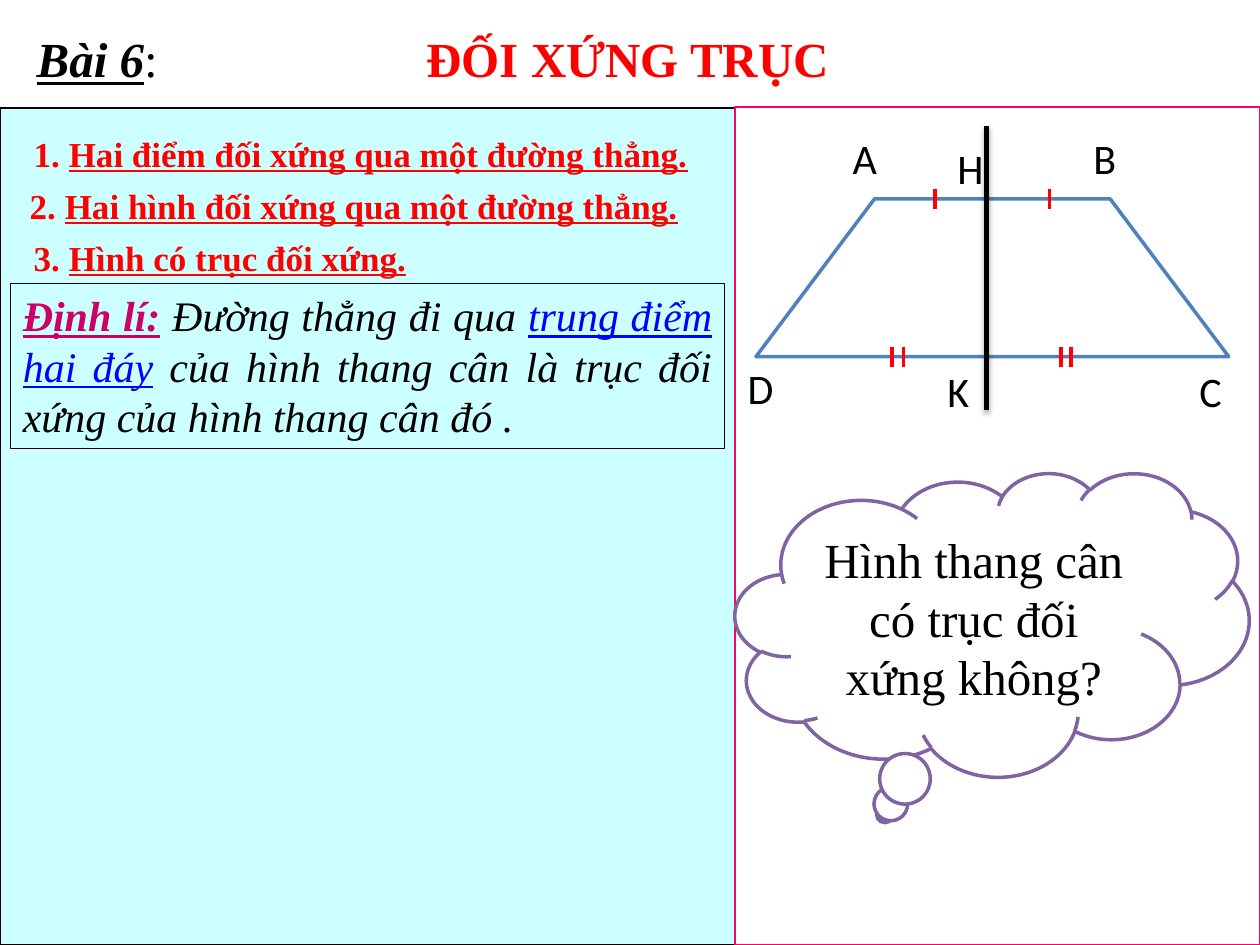
from lxml.etree import SubElement
from pptx import Presentation
from pptx.dml.color import RGBColor
from pptx.enum.shapes import MSO_CONNECTOR, MSO_SHAPE
from pptx.enum.text import MSO_ANCHOR, PP_ALIGN
from pptx.oxml.ns import qn
from pptx.util import Cm, Pt

SERIF, SANS = "Times New Roman", "Calibri"
BLACK, WHITE, RED, BLUE = "000000", "FFFFFF", "FF0000", "0000FF"
PINK, MAGENTA, CYAN = "FF0066", "CC0066", "CCFFFF"
STEEL, PURPLE = "4F81BD", "8064A2"


def rgb(value):
    return RGBColor.from_string(value)


class Lesson:
    def __init__(self, presentation):
        self.slide = presentation.slides.add_slide(presentation.slide_layouts[6])
        self.shapes = self.slide.shapes

    def style(self, shape, fill, line, width):
        shape.shadow.inherit = False
        if fill:
            shape.fill.solid()
            shape.fill.fore_color.rgb = rgb(fill)
        else:
            shape.fill.background()
        shape.line.color.rgb = rgb(line)
        shape.line.width = Pt(width)
        return shape

    def shape(self, box, fill, line, width=0.75, kind=MSO_SHAPE.RECTANGLE):
        shape = self.shapes.add_shape(kind, *map(Cm, box))
        return self.style(shape, fill, line, width)

    def polygon(self, corners, fill, line, width):
        points = [(Cm(x), Cm(y)) for x, y in corners]
        builder = self.shapes.build_freeform(*points[0])
        builder.add_line_segments(points[1:], close=True)
        return self.style(builder.convert_to_shape(), fill, line, width)

    def put_text(self, shape, parts, size, font=SERIF, align=PP_ALIGN.LEFT,
                 anchor=MSO_ANCHOR.TOP):
        """Each part is (text, colour, marks); marks are letters of "biu"."""
        frame = shape.text_frame
        frame.word_wrap = True
        frame.vertical_anchor = anchor
        paragraph = frame.paragraphs[0]
        paragraph.alignment = align
        for text, color, marks in parts:
            run = paragraph.add_run()
            run.text = text
            run.font.name = font
            run.font.size = Pt(size)
            run.font.color.rgb = rgb(color)
            run.font.bold = "b" in marks
            run.font.italic = "i" in marks
            run.font.underline = "u" in marks
        return paragraph

    def text(self, box, parts, size, font=SERIF):
        return self.put_text(self.shapes.add_textbox(*map(Cm, box)), parts, size, font)

    def tab_stop(self, paragraph, position):
        tabs = SubElement(paragraph._p.get_or_add_pPr(), qn("a:tabLst"))
        SubElement(tabs, qn("a:tab"), pos=str(Cm(position)), algn="l")

    def vertical(self, x, top, bottom, color, width, shadow=False):
        line = self.shapes.add_connector(
            MSO_CONNECTOR.STRAIGHT, Cm(x), Cm(top), Cm(x), Cm(bottom))
        line.line.color.rgb = rgb(color)
        line.line.width = Pt(width)
        effects = SubElement(line._element.spPr, qn("a:effectLst"))
        if shadow:
            outer = SubElement(effects, qn("a:outerShdw"), blurRad="40000",
                               dist="23000", dir="5400000", rotWithShape="0")
            black = SubElement(outer, qn("a:srgbClr"), val=BLACK)
            SubElement(black, qn("a:alpha"), val="35000")


def main():
    presentation = Presentation()
    presentation.slide_width, presentation.slide_height = Cm(25.4), Cm(19.05)
    lesson = Lesson(presentation)

    # Panels
    lesson.shape((0, 2.18, 14.82, 16.87), CYAN, BLACK)
    lesson.shape((14.82, 2.16, 10.58, 16.89), WHITE, PINK)

    # Title
    title = lesson.text((0.49, 0.46, 24.9, 1.45), [
        ("Bài 6", BLACK, "biu"), (":\t", BLACK, ""), ("ĐỐI XỨNG TRỤC", RED, "b")], 28)
    lesson.tab_stop(title, 7.86)

    # Section headings
    headings = [(0.43, "Hai điểm đối xứng qua một đường thẳng."),
                (0.35, "Hai hình đối xứng qua một đường thẳng."),
                (0.43, "Hình có trục đối xứng.")]
    for index, (left, heading) in enumerate(headings):
        lesson.text((left, 2.54 + 1.05 * index, 14.2, 1.1), [
            (f"{index + 1}. ", RED, "b"), (heading, RED, "bu")], 20)

    # Isosceles trapezoid ABCD
    top, bottom = 4.01, 7.19
    lesson.polygon([(17.63, top), (22.38, top), (24.77, bottom), (15.24, bottom)],
                   WHITE, STEEL, 2)

    # Axis HK and equal-length marks
    lesson.vertical(19.89, 2.54, 8.26, BLACK, 3, shadow=True)
    for side, marks in [(top, (18.85, 21.16)),
                        (bottom, (17.98, 18.21, 21.39, 21.59))]:
        for x in marks:
            lesson.vertical(x, side - 0.2, side + 0.2, RED, 2)

    # Point names
    points = {"A": (16.94, 2.54), "B": (21.79, 2.54), "C": (23.93, 7.24),
              "D": (14.82, 7.19), "H": (19.05, 2.74), "K": (18.85, 7.24)}
    for name, (x, y) in points.items():
        lesson.text((x, y, 1.07, 1.27), [(name, BLACK, "")], 24, SANS)

    # Question cloud
    question = lesson.shape((14.82, 9.53, 10.36, 6.12), WHITE, PURPLE, 2,
                            MSO_SHAPE.CLOUD_CALLOUT)
    lesson.put_text(question, [("Hình thang cân có trục đối xứng không?", BLACK, "")],
                    28, align=PP_ALIGN.CENTER, anchor=MSO_ANCHOR.MIDDLE)

    # Theorem
    theorem = lesson.shape((0.21, 5.72, 14.4, 3.33), None, BLACK)
    lesson.put_text(theorem, [
        ("Định lí:", MAGENTA, "biu"),
        (" Đường thẳng đi qua ", BLACK, "i"),
        ("trung điểm hai đáy", BLUE, "iu"),
        (" của hình thang cân là trục đối xứng của hình thang cân đó .", BLACK, "i"),
    ], 24, align=PP_ALIGN.JUSTIFY)

    presentation.save("out.pptx")


if __name__ == "__main__":
    main()
